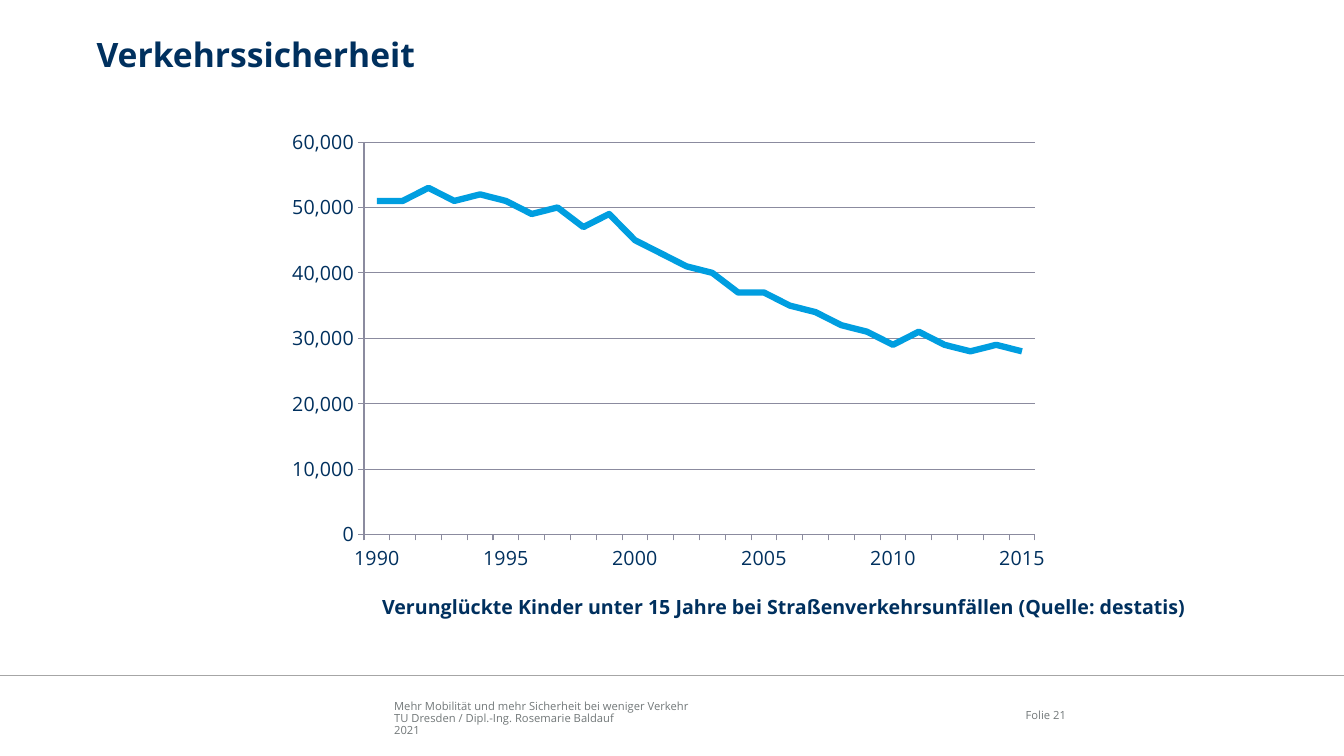
from dataclasses import dataclass

from lxml import etree
from pptx import Presentation
from pptx import util as u
from pptx.chart.data import CategoryChartData
from pptx.dml.color import RGBColor
from pptx.enum import chart as ch, shapes, text
from pptx.oxml import ns

Pt = u.Pt


@dataclass(frozen=True)
class Theme:
    """Colours, font and type sizes of the slide."""
    font: str = "Open Sans"
    navy: str = "00305E"
    blue: str = "009EE0"
    grey: str = "727879"
    rule: str = "A6A6A6"
    axis: str = "8B8B9F"
    title: int = 24
    label: int = 14
    footer: int = 8


THEME = Theme()
FIRST_YEAR = 1990
LABEL_STEP = 5
CASUALTIES = [
    51000, 51000, 53000, 51000, 52000, 51000, 49000, 50000, 47000, 49000,
    45000, 43000, 41000, 40000, 37000, 37000, 35000, 34000, 32000, 31000,
    29000, 31000, 29000, 28000, 29000, 28000,
]


def rgb(value):
    """Turn a hex string into a colour."""
    return RGBColor.from_string(value)


def style_font(font, size, color, bold=False):
    """Apply the theme font with a size, colour and weight."""
    font.name = THEME.font
    font.size = Pt(size)
    font.bold = bold
    font.color.rgb = rgb(color)


def style_line(line, color, width):
    """Set the colour and width of a line."""
    line.color.rgb = rgb(color)
    line.width = Pt(width)


def add_text(s, lines, box, size, color, bold=False, align="LEFT", anchor="TOP", spacing=0.9):
    """Add a text box with one paragraph for each line."""
    sp = s.shapes.add_textbox(*map(Pt, box))
    tf = sp.text_frame
    tf.word_wrap = True
    tf.margin_left = tf.margin_top = tf.margin_right = tf.margin_bottom = 0
    tf.vertical_anchor = text.MSO_ANCHOR[anchor]
    for i, line in enumerate(lines):
        p = tf.paragraphs[0] if i == 0 else tf.add_paragraph()
        p.alignment = text.PP_ALIGN[align]
        p.line_spacing = spacing
        r = p.add_run()
        r.text = line
        style_font(r.font, size, color, bold)
    return sp


def add_rule(s, x1, x2, y):
    """Add a horizontal rule without a shadow."""
    sp = s.shapes.add_connector(shapes.MSO_CONNECTOR.STRAIGHT, Pt(x1), Pt(y), Pt(x2), Pt(y))
    style_line(sp.line, THEME.rule, 1)
    etree.SubElement(sp._element.spPr, ns.qn("a:effectLst"))


def style_axis(axis):
    """Give an axis its line, ticks and label font."""
    axis.major_tick_mark = ch.XL_TICK_MARK.OUTSIDE
    axis.minor_tick_mark = ch.XL_TICK_MARK.NONE
    style_line(axis.format.line, THEME.axis, 0.75)
    style_font(axis.tick_labels.font, THEME.label, THEME.navy)


def set_plot_layout(chart, **fractions):
    """Fix the inner plot area as fractions of the chart."""
    area = chart._chartSpace.chart.plotArea
    for old in area.findall(ns.qn("c:layout")):
        area.remove(old)
    layout = etree.Element(ns.qn("c:layout"))
    area.insert(0, layout)
    manual = etree.SubElement(layout, ns.qn("c:manualLayout"))
    settings = {"layoutTarget": "inner", "xMode": "edge", "yMode": "edge", **fractions}
    for tag, value in settings.items():
        etree.SubElement(manual, ns.qn(f"c:{tag}")).set("val", str(value))


def show_every_label(axis):
    """Keep each category label, even where labels are close."""
    skip = etree.Element(ns.qn("c:tickLblSkip"))
    skip.set("val", "1")
    axis._element.find(ns.qn("c:noMultiLvlLbl")).addprevious(skip)


def add_line_chart(s, box):
    """Add the line chart of child casualties by year."""
    data = CategoryChartData(number_format="#,##0")
    data.categories = [
        "" if i % LABEL_STEP else str(FIRST_YEAR + i) for i in range(len(CASUALTIES))
    ]
    data.add_series("Series 1", CASUALTIES)
    chart = s.shapes.add_chart(ch.XL_CHART_TYPE.LINE, *map(Pt, box), data).chart
    chart.has_legend = False
    chart.has_title = False
    style_font(chart.font, THEME.label, THEME.navy)
    set_plot_layout(chart, x=0.11, y=0.05, w=0.86, h=0.85)

    years, counts = chart.category_axis, chart.value_axis
    for axis in (years, counts):
        style_axis(axis)
    show_every_label(years)
    counts.minimum_scale, counts.maximum_scale, counts.major_unit = 0, 60000, 10000
    counts.has_major_gridlines = True
    style_line(counts.major_gridlines.format.line, THEME.axis, 0.75)
    counts.tick_labels.number_format = "#,##0"
    counts.tick_labels.number_format_is_linked = False

    plot = chart.plots[0]
    plot.vary_by_categories = False
    series = plot.series[0]
    series.smooth = False
    series.marker.style = ch.XL_MARKER_STYLE.NONE
    style_line(series.format.line, THEME.blue, 4.5)


def main():
    """Build and save the slide."""
    prs = Presentation()
    prs.slide_width, prs.slide_height = Pt(960), Pt(540)
    s = prs.slides.add_slide(prs.slide_layouts[6])
    footer = [
        "Mehr Mobilität und mehr Sicherheit bei weniger Verkehr",
        "TU Dresden / Dipl.-Ing. Rosemarie Baldauf",
        "2021",
    ]
    add_text(s, footer, (281.5, 497.5, 408, 29), THEME.footer, THEME.grey, anchor="BOTTOM")
    add_rule(s, 0, 960, 482.4)
    add_text(s, ["Folie 21"], (706, 497, 55.5, 29), THEME.footer, THEME.grey,
             align="RIGHT", anchor="MIDDLE")
    add_text(s, ["Verkehrssicherheit"], (69, 27.5, 833, 54), THEME.title, THEME.navy, bold=True)
    caption = "Verunglückte Kinder unter 15 Jahre bei Straßenverkehrsunfällen (Quelle: destatis)"
    add_text(s, [caption], (260, 420.5, 600, 26), THEME.label, THEME.navy, bold=True,
             align="CENTER", anchor="MIDDLE", spacing=1.0)
    add_line_chart(s, (198.7, 85, 557.3, 329.8))
    prs.save("out.pptx")


if __name__ == "__main__":
    main()
